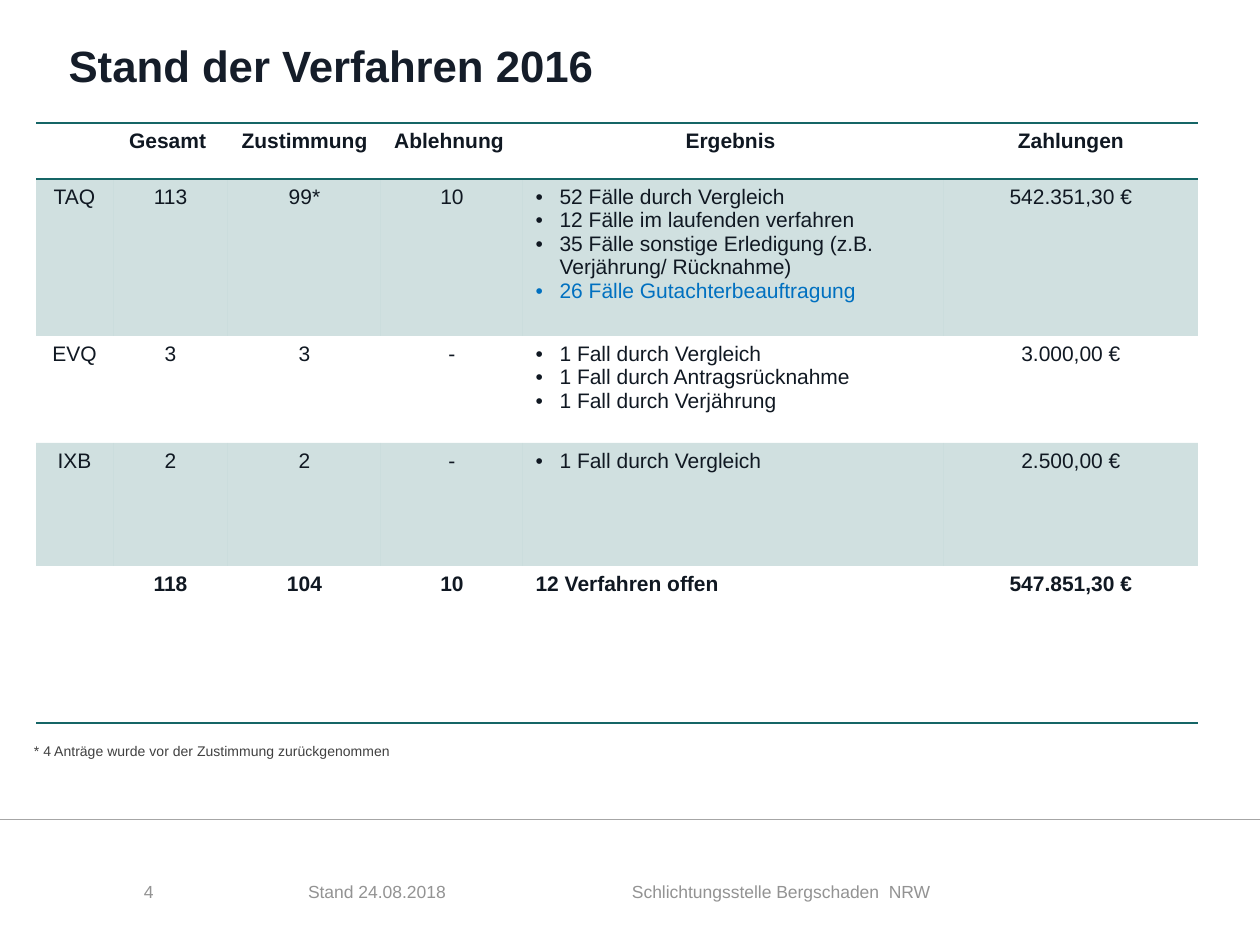
import pptx
import pptx.dml.color
import pptx.enum.shapes
import pptx.enum.text
import pptx.oxml
import pptx.oxml.ns
import pptx.util

INK, GREY, TEAL, BLUE = "101822", "939393", "156566", "0070C0"
PLAIN = "{2D5ABB26-0587-4C30-8999-92F81FD0307C}"
ALIGN = pptx.enum.text.PP_ALIGN
ANCHOR = pptx.enum.text.MSO_ANCHOR

COLS = [77, 115, 153, 142, 421, 254]
ROWS = [56, 157, 107, 123, 157]
DATA = [
    ["", "Gesamt ", "Zustimmung ", "Ablehnung ", "Ergebnis ", "Zahlungen"],
    ["TAQ", "113", "99*", "10",
     ["52 Fälle durch Vergleich",
      "12 Fälle im laufenden verfahren",
      "35 Fälle sonstige Erledigung (z.B. Verjährung/ Rücknahme)",
      "26 Fälle Gutachterbeauftragung"],
     "542.351,30 €"],
    ["EVQ", "3", "3", "-",
     ["1 Fall durch Vergleich",
      "1 Fall durch Antragsrücknahme",
      "1 Fall durch Verjährung"],
     "3.000,00 €"],
    ["IXB", "2", "2", "-", ["1 Fall durch Vergleich"], "2.500,00 €"],
    ["", "118", "104", "10", "12 Verfahren offen", "547.851,30 €"],
]


def px(n):
    """Turn pixels into EMU."""
    return pptx.util.Emu(round(n * 914400 / 126))


def rgb(code):
    """Turn a hex string into a colour."""
    return pptx.dml.color.RGBColor.from_string(code)


def node(xml):
    """Parse one DrawingML element."""
    space = pptx.oxml.ns.nsdecls("a")
    return pptx.oxml.parse_xml(xml.replace(">", f" {space}>", 1))


def write(para, text, size=12, color=INK, bold=False, align=ALIGN.LEFT):
    """Write formatted text into a paragraph."""
    para.alignment = align
    run = para.add_run()
    run.text = text
    font = run.font
    font.name, font.size, font.bold = "Arial", pptx.util.Pt(size), bold
    font.color.rgb = rgb(color)


def place(shape, left, top, width, height):
    """Set the position and size of a shape."""
    shape.left, shape.top = px(left), px(top)
    shape.width, shape.height = px(width), px(height)


def title(slide, text):
    """Fill and format the title placeholder."""
    shape = slide.shapes.title
    place(shape, 56, 33, 1120, 65)
    frame = shape.text_frame
    frame.auto_size = pptx.enum.text.MSO_AUTO_SIZE.NONE
    frame.vertical_anchor = ANCHOR.BOTTOM
    write(frame.paragraphs[0], text, size=25, color="151D29", bold=True)


def label(slide, text, left, top, width, height, inset=0, **look):
    """Add a text box."""
    box = slide.shapes.add_textbox(px(left), px(top), px(width), px(height))
    frame = box.text_frame
    frame.word_wrap = True
    frame.margin_left = frame.margin_right = px(2 * inset)
    frame.margin_top = frame.margin_bottom = px(inset)
    write(frame.paragraphs[0], text, **look)


def rule(slide, y):
    """Draw a thin line across the slide."""
    line = slide.shapes.add_connector(
        pptx.enum.shapes.MSO_CONNECTOR.STRAIGHT, 0, px(y), px(1260), px(y))
    line.line.color.rgb = rgb("A6A6A6")
    line.line.width = pptx.util.Pt(0.5)
    line._element.spPr.append(node("<a:effectLst></a:effectLst>"))


def points(frame, items):
    """Write a bulleted list into a text frame."""
    for i, item in enumerate(items):
        para = frame.add_paragraph() if i else frame.paragraphs[0]
        props = para._p.get_or_add_pPr()
        props.set("marL", str(px(24)))
        props.set("indent", str(-px(24)))
        props.append(node('<a:buFont typeface="Arial"></a:buFont>'))
        props.append(node('<a:buChar char="•"></a:buChar>'))
        write(para, item, color=BLUE if "Gutachter" in item else INK)


def paint(cell, shaded):
    """Fill a cell with a light tint or leave it clear."""
    if not shaded:
        cell.fill.background()
        return
    cell.fill.solid()
    cell.fill.fore_color.rgb = rgb(TEAL)
    tint = next(cell._tc.tcPr.iter(pptx.oxml.ns.qn("a:srgbClr")))
    tint.append(node('<a:alpha val="20000"></a:alpha>'))


def edge(cell, sides):
    """Draw the named borders of a cell, T before B."""
    for i, side in enumerate(sides):
        cell._tc.tcPr.insert(i, node(
            f'<a:ln{side} w="12700"><a:solidFill><a:srgbClr val="{TEAL}"/>'
            f'</a:solidFill></a:ln{side}>'))


def grid(slide):
    """Add the table of proceedings."""
    table = slide.shapes.add_table(
        len(ROWS), len(COLS), px(36), px(123),
        px(sum(COLS)), px(sum(ROWS))).table
    table.first_row = table.horz_banding = False
    table._tbl.tblPr.find(pptx.oxml.ns.qn("a:tableStyleId")).text = PLAIN
    for col, width in zip(table.columns, COLS):
        col.width = px(width)
    last = len(ROWS) - 1
    for r, (height, values) in enumerate(zip(ROWS, DATA)):
        table.rows[r].height = px(height)
        for c, value in enumerate(values):
            cell = table.cell(r, c)
            paint(cell, r % 2 == 1)
            edge(cell, {0: "TB", last: "B"}.get(r, ""))
            if isinstance(value, list):
                points(cell.text_frame, value)
            elif value:
                left = r == last and c == 4
                write(cell.text_frame.paragraphs[0], value,
                      bold=r in (0, last),
                      align=ALIGN.LEFT if left else ALIGN.CENTER)


def main():
    """Build and save the slide."""
    deck = pptx.Presentation()
    deck.slide_width, deck.slide_height = px(1260), px(945)
    slide = deck.slides.add_slide(deck.slide_layouts[5])
    rule(slide, 819)
    title(slide, "Stand der Verfahren 2016")
    grid(slide)
    label(slide, "* 4 Anträge wurde vor der Zustimmung zurückgenommen",
          22, 736, 932, 30, inset=6, size=8, color="404040")
    for text, left, width in [
            ("4", 144, 164),
            ("Stand 24.08.2018", 308, 148),
            ("Schlichtungsstelle Bergschaden  NRW", 632, 490)]:
        label(slide, text, left, 881, width, 26, size=10, color=GREY)
    deck.save("out.pptx")


if __name__ == "__main__":
    main()
